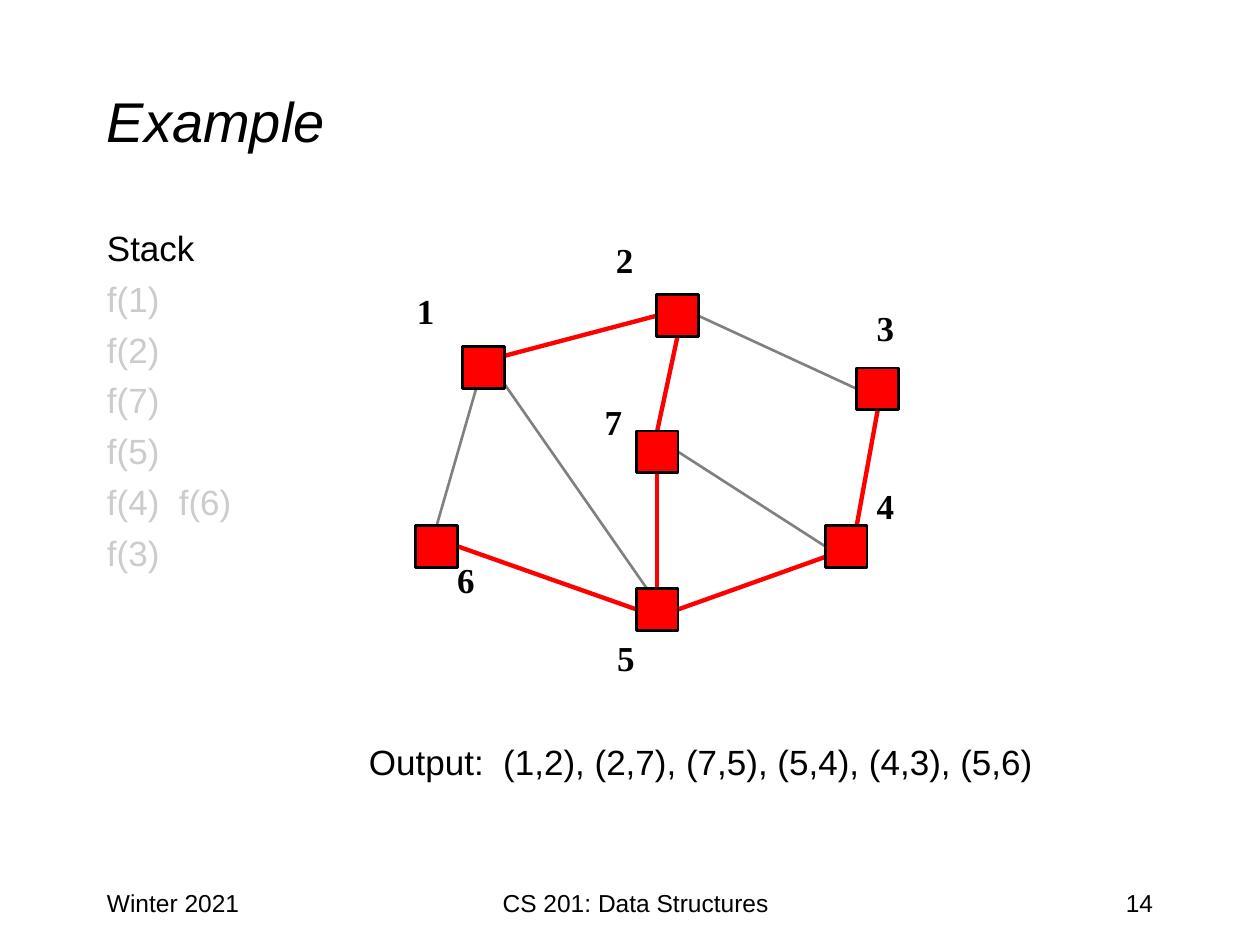
from pptx import Presentation
from pptx.dml.color import RGBColor
from pptx.enum.shapes import MSO_CONNECTOR, MSO_SHAPE
from pptx.enum.text import MSO_ANCHOR, PP_ALIGN
from pptx.util import Inches, Pt
from lxml import etree

LINE, RECT = MSO_CONNECTOR.STRAIGHT, MSO_SHAPE.RECTANGLE
TOP, MID = MSO_ANCHOR.TOP, MSO_ANCHOR.MIDDLE
LEFT, MIDDLE, RIGHT = PP_ALIGN.LEFT, PP_ALIGN.CENTER, PP_ALIGN.RIGHT
BLACK, RED, GRAY, PALE = "000000", "FF0000", "808080", "CCCCCC"
NS = "http://schemas.openxmlformats.org/drawingml/2006/main"

# Grid of 100 columns by 75 rows
COLS, ROWS = 100, 75
deck = Presentation()
deck.slide_width, deck.slide_height = Inches(10), Inches(7.5)
CELL = deck.slide_width // COLS
slide = deck.slides.add_slide(deck.slide_layouts[6])
shapes = slide.shapes


def grid(*nums):
    return [round(n * CELL) for n in nums]


def write(text, area, size=20, font="Arial", align=LEFT, anchor=TOP,
          wrap=True, gap=0):
    box = shapes.add_textbox(*grid(*area))
    frame = box.text_frame
    frame.text = text
    frame.word_wrap = wrap
    frame.vertical_anchor = anchor
    for para in frame.paragraphs:
        para.alignment = align
        para.space_before = Pt(gap)
        para.font.size = Pt(size)
        for run in para.runs:
            run.font.size = Pt(size)
            run.font.name = font
            run.font.color.rgb = RGBColor.from_string(BLACK)
    return frame


# Title
title = write("Example", (7.5, 3.3, 85, 12.5), 32, anchor=MID)
title.paragraphs[0].runs[0].font.italic = True

# Stack: the heading is black, the finished calls are pale
calls = ["Stack", "f(1)", "f(2)", "f(7)", "f(5)", "f(4)  f(6)", "f(3)"]
stack = write("\n".join(calls), (7.5, 17.5, 12.5, 49.2), gap=5)
for para in stack.paragraphs[1:]:
    para.runs[0].font.color.rgb = RGBColor.from_string(PALE)

# Footer
write("Winter 2021", (7.5, 70, 20.8, 5), 14)
write("CS 201: Data Structures", (31.7, 70, 37.5, 5), 14, align=MIDDLE)
write("14", (71.7, 70, 20.8, 5), 14, align=RIGHT)

# Node: corner of its square, corner of its label
SIDE = 3.33
nodes = {
    6: ((33, 41.7), (35.3, 43.8)),
    5: ((50.5, 46.7), (48, 50)),
    4: ((65.5, 41.7), (68.6, 38)),
    7: ((50.5, 34.2), (47, 31.3)),
    2: ((52.1, 23.4), (47.9, 18.4)),
    3: ((68, 29.2), (68.6, 23.8)),
    1: ((36.7, 27.5), (32.1, 22.5)),
}

# Edge: node and share of its side at each end, then whether it is in the tree
edges = [
    (1, (0.9, 0.25), 2, (0, 0.5), True),
    (2, (0.5, 1), 7, (0.5, 0), True),
    (2, (1, 0.5), 3, (0, 0.5), False),
    (7, (1, 0.5), 4, (0, 0.5), False),
    (3, (0.5, 1), 4, (0.75, 0), True),
    (7, (0.5, 1), 5, (0.5, 0), True),
    (5, (1, 0.5), 4, (0, 0.75), True),
    (6, (1, 0.5), 5, (0, 0.5), True),
    (1, (0.4, 0.75), 6, (0.5, 0), False),
    (1, (0.9, 0.75), 5, (0.25, 0), False),
]
for start, out, end, into, tree in edges:
    ends = [base + SIDE * part
            for node, port in ((start, out), (end, into))
            for base, part in zip(nodes[node][0], port)]
    edge = shapes.add_connector(LINE, *grid(*ends))
    edge.line.color.rgb = RGBColor.from_string(RED if tree else GRAY)
    edge.line.width = Pt(2.5 if tree else 1.5)
    etree.SubElement(edge._element.spPr, f"{{{NS}}}effectLst")

# Squares and their numbers
for name, (spot, tag) in nodes.items():
    node = shapes.add_shape(RECT, *grid(*spot, SIDE, SIDE))
    node.shadow.inherit = False
    node.fill.solid()
    node.fill.fore_color.rgb = RGBColor.from_string(RED)
    node.line.color.rgb = RGBColor.from_string(BLACK)
    node.line.width = Pt(1.5)
    label = write(str(name), (*tag, 3.4, 4.4), font="Times New Roman",
                  wrap=False)
    label.paragraphs[0].runs[0].font.bold = True

# Output
write("Output:  (1,2), (2,7), (7,5), (5,4), (4,3), (5,6)",
      (28.3, 58.3, 66.7, 5.8), gap=5)

deck.save("out.pptx")
